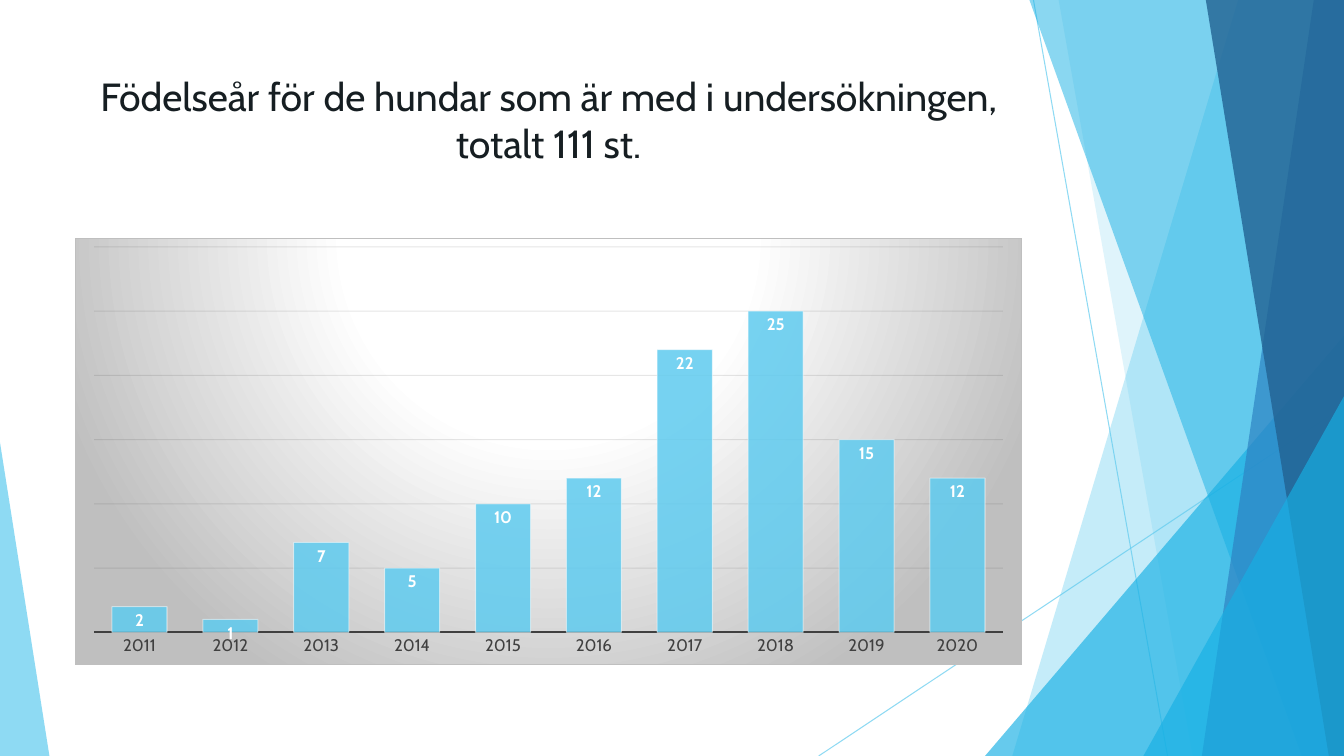
from lxml.etree import SubElement, fromstring
from pptx import Presentation
from pptx.chart.data import CategoryChartData
from pptx.dml.color import RGBColor
from pptx.enum.chart import XL_CHART_TYPE, XL_LABEL_POSITION, XL_TICK_LABEL_POSITION, XL_TICK_MARK
from pptx.enum.shapes import MSO_CONNECTOR, MSO_SHAPE
from pptx.enum.text import MSO_ANCHOR, PP_ALIGN
from pptx.oxml.ns import nsdecls, qn
from pptx.util import Inches, Pt

FONT = "Cabin"
SKY, CYAN, BLUE, NAVY = "5FCBEF", "17B0E4", "2E83C3", "226292"
WIDTH, HEIGHT = 13.33, 7.5
BIRTHS = {2011: 2, 2012: 1, 2013: 7, 2014: 5, 2015: 10,
          2016: 12, 2017: 22, 2018: 25, 2019: 15, 2020: 12}


def rgb(color):
    return RGBColor.from_string(color)


def paint(fill, color, alpha=100):
    fill.solid()
    fill.fore_color.rgb = rgb(color)
    if alpha < 100:
        solid = fill._xPr.find(qn("a:solidFill"))
        SubElement(solid[0], qn("a:alpha"), val=str(alpha * 1000))


def stroke(line, color, width=0.75, alpha=100):
    paint(line.fill, color, alpha)
    line.width = Pt(width)


def style_font(font, size, color, bold=False):
    font.name = FONT
    font.size = Pt(size)
    font.bold = bold
    font.color.rgb = rgb(color)


def add_text(slide, text, box, size=28, color="161E22", align=PP_ALIGN.CENTER):
    frame = slide.shapes.add_textbox(*map(Inches, box)).text_frame
    frame.word_wrap = True
    frame.vertical_anchor = MSO_ANCHOR.TOP
    paragraph = frame.paragraphs[0]
    paragraph.alignment = align
    run = paragraph.add_run()
    run.text = text
    style_font(run.font, size, color)


def add_ray(slide, start, end):
    ray = slide.shapes.add_connector(MSO_CONNECTOR.STRAIGHT, *map(Inches, start + end))
    stroke(ray.line, SKY, alpha=70)
    SubElement(ray._element.spPr, qn("a:effectLst"))


def finish_facet(facet, color, alpha):
    facet.shadow.inherit = False
    paint(facet.fill, color, alpha)
    facet.line.fill.background()


def add_band(slide, box, top_left, bottom_left, color, alpha):
    left, top, width, height = box
    right, bottom = left + width, top + height
    corners = [(top_left, top), (right, top), (right, bottom), (bottom_left, bottom)]
    points = [(Inches(x), Inches(y)) for x, y in corners]
    builder = slide.shapes.build_freeform(*points[0])
    builder.add_line_segments(points[1:], close=True)
    finish_facet(builder.convert_to_shape(), color, alpha)


def add_wedge(slide, box, apex, color, alpha):
    wedge = slide.shapes.add_shape(MSO_SHAPE.ISOSCELES_TRIANGLE, *map(Inches, box))
    wedge.adjustments[0] = apex
    finish_facet(wedge, color, alpha)


def add_facets(slide, box):
    left, top, width, height = box
    right, bottom = left + width, top + height
    add_ray(slide, (10.25, top), (11.58, bottom))
    add_ray(slide, (right, 4.03), (8.12, bottom))

    def corner(wedge_width, wedge_height):
        wedge_box = (right - wedge_width, bottom - wedge_height, wedge_width, wedge_height)
        add_wedge(slide, wedge_box, 1, CYAN, 66)

    for band in [(12.28, 10.04, SKY, 36), (10.5, 11.83, SKY, 20)]:
        add_band(slide, box, *band)
    corner(3.56, 4.17)
    for band in [(10.21, 12.91, CYAN, 50), (13.03, 11.92, BLUE, 70), (11.96, 13.18, NAVY, 80)]:
        add_band(slide, box, *band)
    corner(1.99, 3.57)
    add_wedge(slide, (left, bottom - 3.11, 0.49, 3.11), 0, SKY, 70)


def add_chart_background(chart):
    background = fromstring(
        f'<c:spPr {nsdecls("c", "a")}><a:gradFill><a:gsLst>'
        '<a:gs pos="0"><a:srgbClr val="FFFFFF"/></a:gs>'
        '<a:gs pos="39000"><a:srgbClr val="FFFFFF"/></a:gs>'
        '<a:gs pos="100000"><a:srgbClr val="BFBFBF"/></a:gs></a:gsLst>'
        '<a:path path="circle"><a:fillToRect l="50000" t="-80000" r="50000" b="180000"/></a:path>'
        '</a:gradFill><a:ln w="9525"><a:solidFill><a:srgbClr val="BFBFBF"/></a:solidFill></a:ln></c:spPr>')
    chart._chartSpace.find(qn("c:chart")).addnext(background)


def add_birth_chart(slide, box):
    data = CategoryChartData()
    data.categories = [str(year) for year in BIRTHS]
    data.add_series("Series 1", BIRTHS.values())
    chart = slide.shapes.add_chart(
        XL_CHART_TYPE.COLUMN_CLUSTERED, *map(Inches, box), data).chart
    chart.has_legend = False
    chart.has_title = False
    style_font(chart.font, 10, "000000")
    add_chart_background(chart)

    years = chart.category_axis
    years.major_tick_mark = XL_TICK_MARK.NONE
    style_font(years.tick_labels.font, 12, "404040")
    stroke(years.format.line, "404040", 1.5)

    counts = chart.value_axis
    counts.minimum_scale, counts.maximum_scale, counts.major_unit = 0, 30, 5
    counts.tick_label_position = XL_TICK_LABEL_POSITION.NONE
    counts.visible = False
    stroke(counts.major_gridlines.format.line, "0D0D0D", alpha=10)

    plot = chart.plots[0]
    plot.gap_width = 65
    plot.vary_by_categories = False
    births = plot.series[0]
    paint(births.format.fill, SKY, 85)
    stroke(births.format.line, "FFFFFF", alpha=50)
    labels = births.data_labels
    labels.show_value = True
    labels.position = XL_LABEL_POSITION.INSIDE_END
    style_font(labels.font, 12, "FFFFFF", bold=True)


def main():
    presentation = Presentation()
    presentation.slide_width = Inches(WIDTH)
    presentation.slide_height = Inches(HEIGHT)
    slide = presentation.slides.add_slide(presentation.slide_layouts[6])
    add_facets(slide, (0, 0, WIDTH, HEIGHT))
    add_text(slide, "Födelseår för de hundar som är med i undersökningen, totalt 111 st.",
             (0.74, 0.67, 9.4, 1.44))
    add_birth_chart(slide, (0.74, 2.36, 9.4, 4.24))
    presentation.save("out.pptx")


if __name__ == "__main__":
    main()
